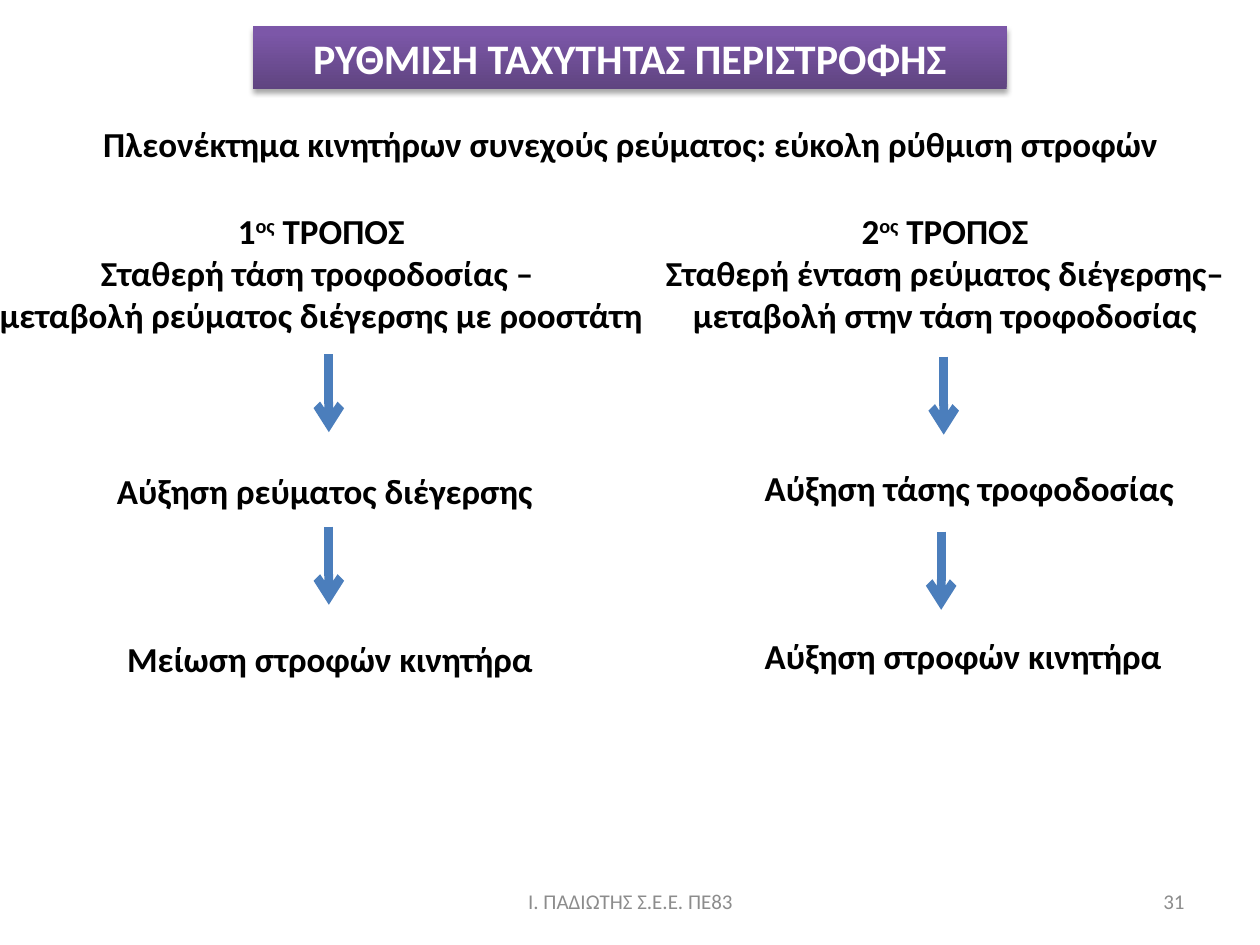
from lxml import etree
from pptx import Presentation
from pptx.dml.color import RGBColor
from pptx.enum.shapes import MSO_CONNECTOR
from pptx.enum.text import MSO_ANCHOR, MSO_AUTO_SIZE, PP_ALIGN
from pptx.oxml import parse_xml
from pptx.oxml.ns import qn
from pptx.util import Inches, Pt

LEFT, MID, RIGHT = PP_ALIGN.LEFT, PP_ALIGN.CENTER, PP_ALIGN.RIGHT
TOP, HALF = MSO_ANCHOR.TOP, MSO_ANCHOR.MIDDLE
FIXED = MSO_AUTO_SIZE.NONE
LINE = MSO_CONNECTOR.STRAIGHT

BLACK = RGBColor(0x00, 0x00, 0x00)
WHITE = RGBColor(0xFF, 0xFF, 0xFF)
GREY = RGBColor(0x8C, 0x8C, 0x8C)
BLUE = RGBColor(0x4B, 0x7E, 0xBC)
DARK = RGBColor(0x5F, 0x44, 0x80)
LIGHT = RGBColor(0x7C, 0x57, 0xA8)

SHADOW = """<a:effectLst
 xmlns:a="http://schemas.openxmlformats.org/drawingml/2006/main">
 <a:outerShdw blurRad="39370" dist="22860" dir="5400000" rotWithShape="0">
 <a:srgbClr val="000000"><a:alpha val="35000"/></a:srgbClr>
 </a:outerShdw></a:effectLst>"""


def write(frame, text, size=20, bold=True, color=BLACK, align=MID,
          anchor=TOP, wrap=True):
    """Fill a frame, one paragraph a line; text between ^ marks is raised."""
    frame.word_wrap = wrap
    frame.auto_size = FIXED
    frame.vertical_anchor = anchor
    frame.margin_left = frame.margin_right = Inches(0.1)
    frame.margin_top = frame.margin_bottom = Inches(0.05)
    for row, line in enumerate(text.split("\n")):
        para = frame.add_paragraph() if row else frame.paragraphs[0]
        para.alignment = align
        for part, words in enumerate(line.split("^")):
            run = para.add_run()
            run.text = words
            font = run.font
            font.name, font.size, font.bold = "Calibri", Pt(size), bold
            font.color.rgb = color
            if part % 2:
                run._r.get_or_add_rPr().set("baseline", "30000")


class Page:
    """A slide on a grid of 100 columns by 75 rows."""

    def __init__(self, deck):
        self.slide = deck.slides.add_slide(deck.slide_layouts[5])
        self.col = deck.slide_width / 100
        self.row = deck.slide_height / 75

    def place(self, x, y, w, h):
        return (int(x * self.col), int(y * self.row),
                int(w * self.col), int(h * self.row))

    def title(self, text, *box):
        shape = self.slide.shapes.title
        shape.left, shape.top, shape.width, shape.height = self.place(*box)
        shape.fill.gradient()
        shape.fill.gradient_angle = 90
        stops = shape.fill.gradient_stops
        for stop, color, spot in zip(stops, (DARK, LIGHT), (0, 0.9)):
            stop.color.rgb, stop.position = color, spot
        shape.line.fill.background()
        shape._element.spPr.append(parse_xml(SHADOW))
        write(shape.text_frame, text, size=24, color=WHITE, anchor=HALF)

    def text(self, text, *box, **style):
        shape = self.slide.shapes.add_textbox(*self.place(*box))
        write(shape.text_frame, text, **style)

    def arrow(self, x, y, drop=6.2):
        left, top, _, fall = self.place(x, y, 0, drop)
        link = self.slide.shapes.add_connector(
            LINE, left, top, left, top + fall)
        link.line.color.rgb = BLUE
        link.line.width = Pt(5)
        etree.SubElement(link.line._get_or_add_ln(), qn("a:tailEnd"),
                         type="arrow")
        etree.SubElement(link._element.spPr, qn("a:effectLst"))


def main():
    deck = Presentation()
    deck.slide_width, deck.slide_height = Inches(10), Inches(7.5)
    page = Page(deck)
    page.title("ΡΥΘΜΙΣΗ ΤΑΧΥΤΗΤΑΣ ΠΕΡΙΣΤΡΟΦΗΣ", 20.1, 2.1, 59.8, 5)
    page.text("Πλεονέκτημα κινητήρων συνεχούς ρεύματος: "
              "εύκολη ρύθμιση στροφών", 5.5, 9.2, 89.1, 4.4)

    page.text("1^ος^ ΤΡΟΠΟΣ\nΣταθερή τάση τροφοδοσίας – \n"
              "μεταβολή ρεύματος διέγερσης με ροοστάτη",
              -1.2, 16.1, 53.4, 11.1, wrap=False)
    page.text("2^ος^ ΤΡΟΠΟΣ\nΣταθερή ένταση ρεύματος διέγερσης– "
              "μεταβολή στην τάση τροφοδοσίας", 51.1, 16.1, 47.8, 11.1)

    steps = [("Αύξηση ρεύματος διέγερσης", 8.3, 36.8, 35.9),
             ("Μείωση στροφών κινητήρα", 9.1, 50.1, 34.5),
             ("Αύξηση τάσης τροφοδοσίας", 59.7, 36.5, 35.4),
             ("Αύξηση στροφών κινητήρα", 59.7, 49.9, 33.8)]
    for words, x, y, w in steps:
        page.text(words, x, y, w, 4.4, align=LEFT, wrap=False)
    for x, y in [(26.1, 28.1), (26.1, 41.8), (74.9, 28.3), (74.7, 42.2)]:
        page.arrow(x, y)

    small = dict(size=12, bold=False, color=GREY, anchor=HALF)
    page.text("31", 71.7, 69.5, 23.3, 4, align=RIGHT, **small)
    page.text("Ι. ΠΑΔΙΩΤΗΣ Σ.Ε.Ε. ΠΕ83", 34.2, 69.5, 31.7, 4, **small)
    deck.save("out.pptx")


if __name__ == "__main__":
    main()
